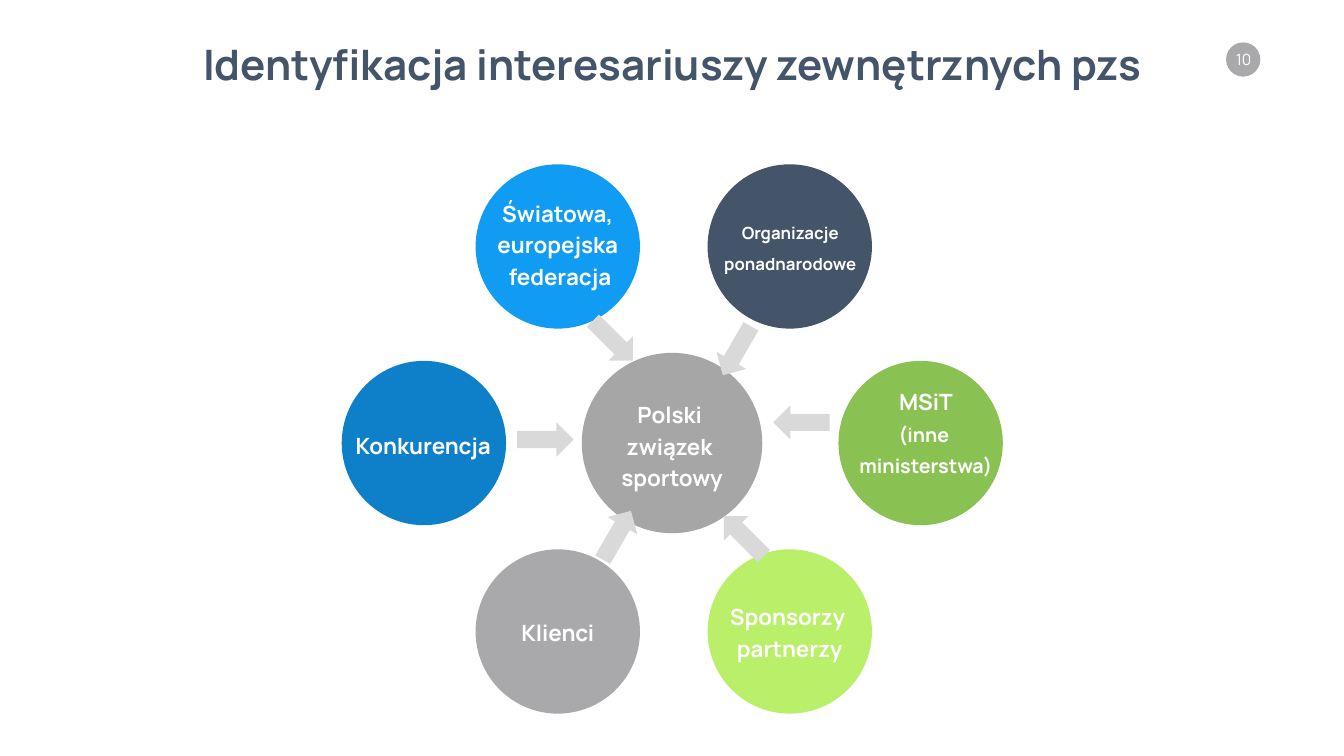
"""Build the slide of external stakeholders around a sports association."""
from pptx import Presentation
from pptx.dml.color import RGBColor
from pptx.enum.shapes import MSO_SHAPE as Shape
from pptx.enum.text import MSO_ANCHOR as Anchor, MSO_AUTO_SIZE as AutoSize, PP_ALIGN as Align
from pptx.util import Inches, Pt

SLIDE_WIDTH, SLIDE_HEIGHT = Inches(13.33), Inches(7.5)
COLUMN, ROW = SLIDE_WIDTH / 100, SLIDE_HEIGHT / 100

FONT = "Manrope"
LINE_PITCH = Pt(22.5)
LINE_ROWS, PADDING_ROWS = 4.17, 1.33
CIRCLE, HUB, BADGE = 12.23, 13.43, 2.55
ARROW_COLUMNS, ARROW_ROWS = 4.2, 4.53
LEFT, RIGHT = 41.5, 58.76
TOP, MIDDLE, BOTTOM = 32.6, 58.6, 83.53

WHITE = RGBColor(0xFF, 0xFF, 0xFF)
NAVY = RGBColor(0x44, 0x54, 0x69)
SKY = RGBColor(0x11, 0x9C, 0xF4)
BLUE = RGBColor(0x0E, 0x80, 0xC9)
GREEN = RGBColor(0x8A, 0xC1, 0x53)
LIME = RGBColor(0xBA, 0xEF, 0x69)
GRAY = RGBColor(0xA9, 0xA8, 0xAB)
HUB_GRAY = RGBColor(0xA6, 0xA6, 0xA6)
ARROW_GRAY = RGBColor(0xD9, 0xD9, 0xD9)

CIRCLES = [
    (50, MIDDLE, HUB, HUB_GRAY),
    (RIGHT, TOP, CIRCLE, NAVY),
    (RIGHT, BOTTOM, CIRCLE, LIME),
    (LEFT, TOP, CIRCLE, SKY),
    (LEFT, BOTTOM, CIRCLE, GRAY),
    (68.5, MIDDLE, CIRCLE, GREEN),
    (31.54, MIDDLE, CIRCLE, BLUE),
]

ARROWS = [
    (Shape.LEFT_ARROW, 59.63, 55.87, 0),
    (Shape.RIGHT_ARROW, 40.58, 58.13, 0),
    (Shape.RIGHT_ARROW, 45.6, 45.07, 45),
    (Shape.RIGHT_ARROW, 45.9, 70.8, 300),
    (Shape.LEFT_ARROW, 54.83, 46.4, 300),
    (Shape.LEFT_ARROW, 55.35, 70.93, 45),
]

LABELS = [
    (50, 58.73, 9.68, ["Polski ", "związek ", "sportowy"], [16, 16, 16]),
    (LEFT, 32.07, 11.25, ["Światowa,", "europejska", " federacja"], [16, 16, 16]),
    (58.8, 32.07, 12.3, ["Organizacje", "ponadnarodowe"], [12, 12]),
    (LEFT, 83.4, 7.35, ["Klienci"], [16]),
    (RIGHT, 83.4, 10.88, ["Sponsorzy ", "partnerzy"], [16, 16]),
    (68.89, 56.93, 12.23, ["MSiT", "(inne ", "ministerstwa)"], [16, 14, 14]),
    (31.5, MIDDLE, 12.6, ["Konkurencja"], [16]),
]


def centred(x, y, width, height):
    """Return left, top, width and height around a centre in grid units."""
    return (round((x - width / 2) * COLUMN), round((y - height / 2) * ROW),
            round(width * COLUMN), round(height * ROW))


def add_filled(slide, kind, frame, color, rotation=0):
    """Add a flat preset shape without outline."""
    shape = slide.shapes.add_shape(kind, *frame)
    shape.shadow.inherit = False
    shape.fill.solid()
    shape.fill.fore_color.rgb = color
    shape.line.fill.background()
    shape.rotation = rotation


def add_circle(slide, x, y, diameter, color):
    """Add a circle whose diameter is given in columns."""
    frame = centred(x, y, diameter, diameter * COLUMN / ROW)
    add_filled(slide, Shape.OVAL, frame, color)


def add_text(slide, frame, lines, sizes, color=WHITE, bold=True,
             anchor=Anchor.MIDDLE, spacing=None, inset=None):
    """Add centred text with one paragraph for each line."""
    text_frame = slide.shapes.add_textbox(*frame).text_frame
    text_frame.word_wrap = False
    text_frame.auto_size = AutoSize.SHAPE_TO_FIT_TEXT
    text_frame.vertical_anchor = anchor
    if inset is not None:
        text_frame.margin_left = text_frame.margin_right = inset
        text_frame.margin_top = text_frame.margin_bottom = inset
    text_frame.text = "\n".join(lines)
    for paragraph, size in zip(text_frame.paragraphs, sizes):
        paragraph.alignment = Align.CENTER
        paragraph.line_spacing = spacing
        for run in paragraph.runs:
            run.font.name = FONT
            run.font.size = Pt(size)
            run.font.bold = bold
            run.font.color.rgb = color


def add_label(slide, x, y, width, lines, sizes):
    """Add a circle's label, as high as its lines need."""
    frame = centred(x, y, width, len(lines) * LINE_ROWS + PADDING_ROWS)
    add_text(slide, frame, lines, sizes, spacing=LINE_PITCH)


def main():
    """Build and save the slide."""
    presentation = Presentation()
    presentation.slide_width, presentation.slide_height = SLIDE_WIDTH, SLIDE_HEIGHT
    slide = presentation.slides.add_slide(presentation.slide_layouts[6])

    add_circle(slide, 92.5, 7.87, BADGE, GRAY)
    add_text(slide, centred(92.53, 7.8, 1.73, 2.53), ["10"], [11], bold=False, inset=0)
    add_text(slide, centred(50.04, 8.47, 76.5, 8.13),
             ["Identyfikacja interesariuszy zewnętrznych pzs"], [30],
             color=NAVY, anchor=Anchor.TOP)

    for circle in CIRCLES:
        add_circle(slide, *circle)
    for kind, x, y, rotation in ARROWS:
        frame = centred(x, y, ARROW_COLUMNS, ARROW_ROWS)
        add_filled(slide, kind, frame, ARROW_GRAY, rotation)
    for label in LABELS:
        add_label(slide, *label)

    presentation.save("out.pptx")


if __name__ == "__main__":
    main()
